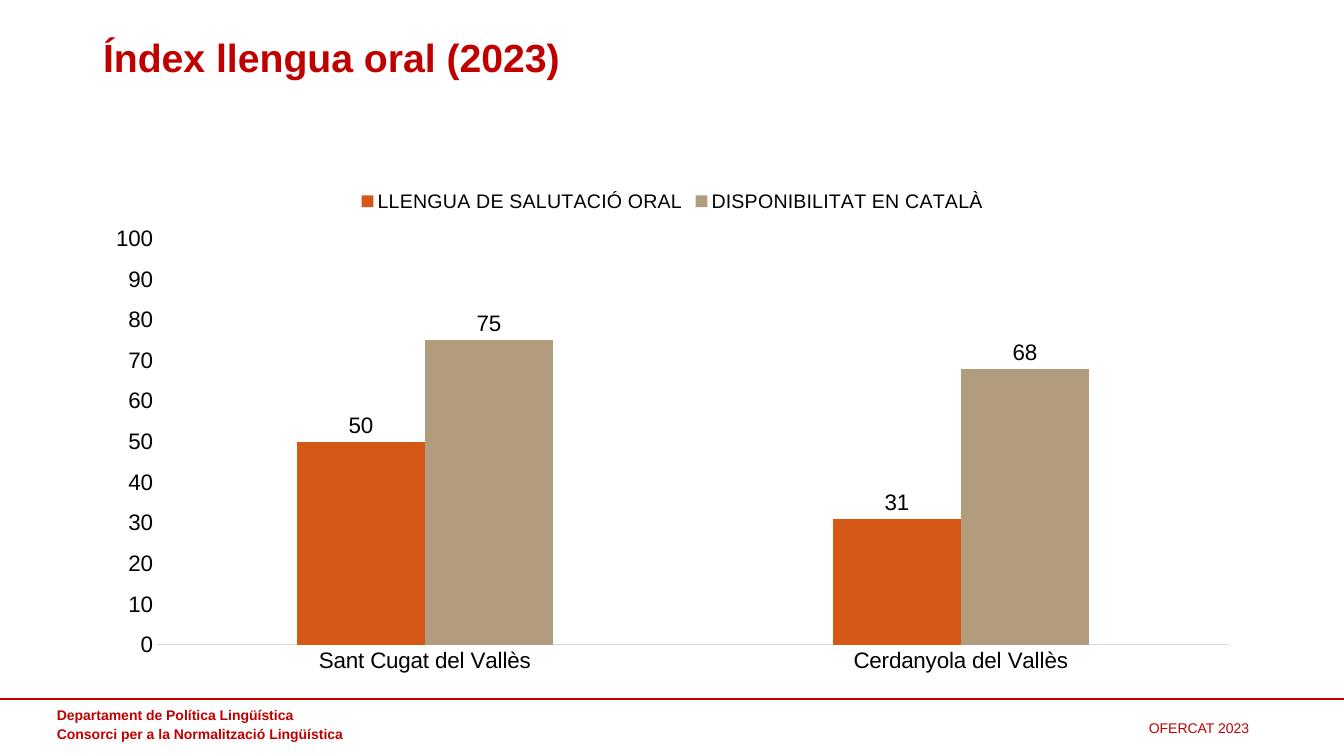
from pptx import Presentation
from pptx.chart.data import CategoryChartData
from pptx.dml.color import RGBColor
from pptx.enum.chart import XL_CHART_TYPE, XL_LABEL_POSITION, XL_LEGEND_POSITION, XL_TICK_MARK
from pptx.enum.shapes import MSO_CONNECTOR
from pptx.enum.text import MSO_ANCHOR, PP_ALIGN
from pptx.oxml.ns import qn
from pptx.util import Pt
from lxml.etree import SubElement

EMU_PER_PX = 914400 / 100.8
WIDTH, HEIGHT = 1344, 756
RED = RGBColor(0xC0, 0x00, 0x00)
ORANGE = RGBColor(0xD5, 0x58, 0x16)
TAN = RGBColor(0xB1, 0x9C, 0x7D)
GREY = RGBColor(0xD9, 0xD9, 0xD9)
BLACK = RGBColor(0x00, 0x00, 0x00)


def px(*lengths):
    return [round(n * EMU_PER_PX) for n in lengths]


def set_font(font, size, color=BLACK, bold=False):
    font.name = "Arial"
    font.size = Pt(size)
    font.bold = bold
    font.color.rgb = color


def write(tf, text, size=10, color=RED, bold=False, align=PP_ALIGN.LEFT,
          anchor=MSO_ANCHOR.TOP, spacing=1.14):
    tf.word_wrap = True
    tf.vertical_anchor = anchor
    for i, line in enumerate(text.split("\n")):
        p = tf.add_paragraph() if i else tf.paragraphs[0]
        p.alignment = align
        p.line_spacing = spacing
        r = p.add_run()
        r.text = line
        set_font(r.font, size, color, bold)


class Deck:
    """Slide builder that holds the presentation and its current slide."""

    def __init__(self):
        self.prs = Presentation()
        self.prs.slide_width, self.prs.slide_height = px(WIDTH, HEIGHT)
        self.s = self.prs.slides.add_slide(self.prs.slide_layouts[5])

    def title(self, text, x, y, w, h):
        sp = self.s.shapes.title
        sp.left, sp.top, sp.width, sp.height = px(x, y, w, h)
        write(sp.text_frame, text, size=28, bold=True, anchor=MSO_ANCHOR.MIDDLE, spacing=0.9)

    def text(self, text, x, y, w, h, **fmt):
        sp = self.s.shapes.add_textbox(*px(x, y, w, h))
        write(sp.text_frame, text, **fmt)

    def rule(self, y):
        line = self.s.shapes.add_connector(MSO_CONNECTOR.STRAIGHT, *px(0, y, WIDTH, y))
        line.line.color.rgb = RED
        line.line.width = Pt(1.5)
        SubElement(line._element.spPr, qn("a:effectLst"))

    def columns(self, categories, series, x, y, w, h):
        data = CategoryChartData(number_format="0")
        data.categories = categories
        for name, values, _ in series:
            data.add_series(name, values)
        frame = self.s.shapes.add_chart(XL_CHART_TYPE.COLUMN_CLUSTERED, *px(x, y, w, h), data)
        chart = frame.chart
        set_font(chart.font, 16)
        chart.has_title = False
        chart.has_legend = True
        chart.legend.position = XL_LEGEND_POSITION.TOP
        chart.legend.include_in_layout = False
        set_font(chart.legend.font, 14)

        for axis in (chart.category_axis, chart.value_axis):
            axis.major_tick_mark = axis.minor_tick_mark = XL_TICK_MARK.NONE
            axis.has_major_gridlines = False
            set_font(axis.tick_labels.font, 16)
        chart.category_axis.format.line.color.rgb = GREY
        chart.category_axis.format.line.width = Pt(0.75)
        scale = chart.value_axis
        scale.minimum_scale, scale.maximum_scale, scale.major_unit = 0, 100, 10
        scale.tick_labels.number_format = "0"
        scale.tick_labels.number_format_is_linked = False
        scale.format.line.fill.background()

        plot = chart.plots[0]
        plot.gap_width = 219
        plot.overlap = 0
        plot.vary_by_categories = False
        for ser, (_, _, color) in zip(plot.series, series):
            ser.format.fill.solid()
            ser.format.fill.fore_color.rgb = color
            labels = ser.data_labels
            labels.show_value = True
            labels.position = XL_LABEL_POSITION.OUTSIDE_END
            labels.number_format = "0"
            labels.number_format_is_linked = False
            set_font(labels.font, 16)


def main():
    deck = Deck()
    deck.rule(699)
    deck.text("OFERCAT 2023", 587, 712, 672, 28, align=PP_ALIGN.RIGHT)
    deck.text("Departament de Política Lingüística\nConsorci per a la Normalització Lingüística",
              47, 699, 332, 48, bold=True)
    deck.title("Índex llengua oral (2023)", 93, 12, 1159, 96)
    deck.columns(
        ["Sant Cugat del Vallès", "Cerdanyola del Vallès"],
        [("LLENGUA DE SALUTACIÓ ORAL", (50, 31), ORANGE),
         ("DISPONIBILITAT EN CATALÀ", (75, 68), TAN)],
        93, 179, 1159, 504)
    deck.prs.save("out.pptx")


if __name__ == "__main__":
    main()
